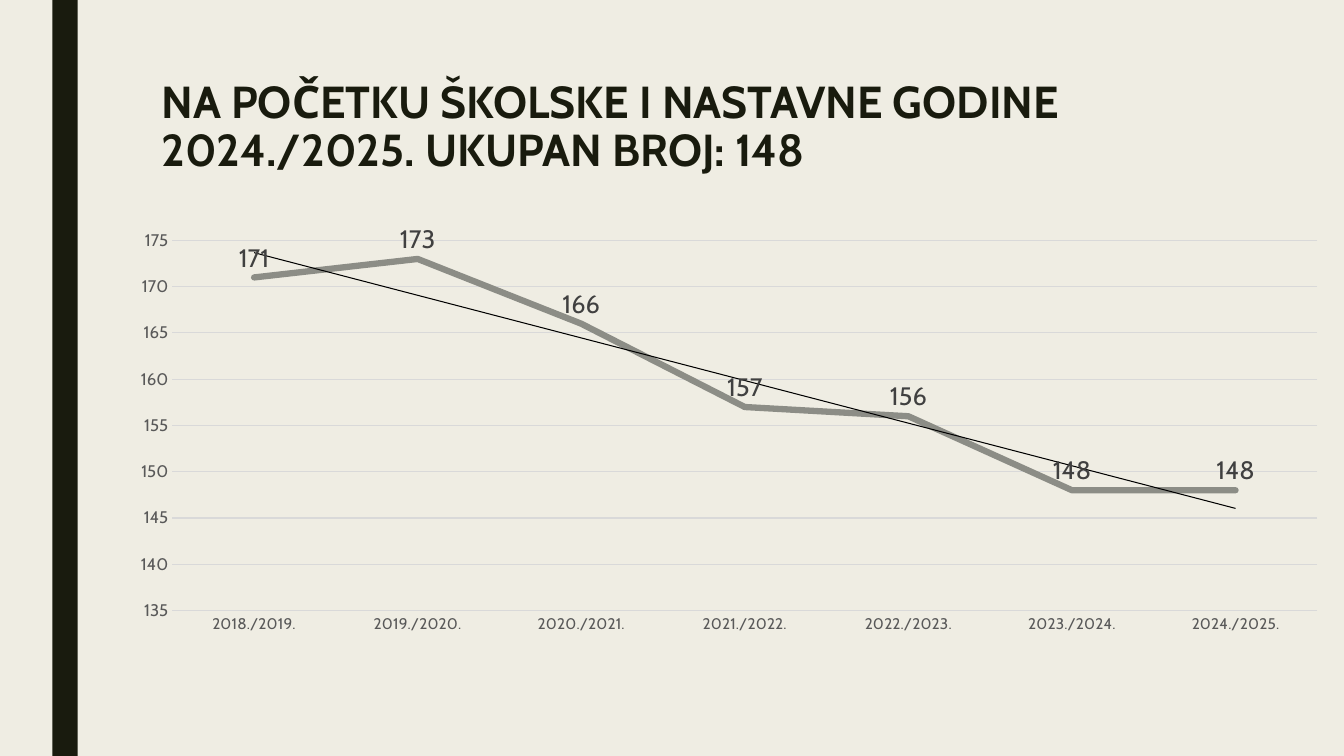
from dataclasses import dataclass

from lxml import etree
from pptx import Presentation
from pptx import util as u
from pptx.chart.data import CategoryChartData
from pptx.dml.color import RGBColor
from pptx.enum import chart as ch, shapes, text
from pptx.oxml import parse_xml
from pptx.oxml.ns import nsdecls, qn

# Content
TITLE = "NA POČETKU ŠKOLSKE I NASTAVNE GODINE 2024./2025. UKUPAN BROJ: 148"
PUPILS = {
    "2018./2019.": 171,
    "2019./2020.": 173,
    "2020./2021.": 166,
    "2021./2022.": 157,
    "2022./2023.": 156,
    "2023./2024.": 148,
    "2024./2025.": 148,
}
AXIS_MIN, AXIS_MAX, AXIS_STEP = 135, 175, 5


@dataclass(frozen=True)
class Theme:
    font: str = "Cabin"
    paper: str = "EFEDE3"
    ink: str = "191B0E"
    series: str = "8C8D86"
    grid: str = "D9D9D9"
    axis_text: str = "595959"
    label_text: str = "404040"
    trend: str = "000000"
    title_size: float = 32
    label_size: float = 18
    value_size: float = 12
    category_size: float = 11


THEME = Theme()

# Geometry: left, top, width, height in inches; the plot in shares of the chart
WIDTH, HEIGHT = 13.33, 7.5
BAR_BOX = (0.52, 0, 0.25, HEIGHT)
TITLE_BOX = (1.5, 0.75, 10.5, 1.62)
CHART_BOX = (0.45, 1.08, 12.98, 6.31)
PLOT_SHARES = {"x": 0.097, "y": 0.207, "w": 0.875, "h": 0.582}


def inches(box):
    return [u.Inches(length) for length in box]


def rgb(color):
    return RGBColor.from_string(color)


def style_font(font, size, color, bold=False):
    font.name, font.size, font.bold = THEME.font, u.Pt(size), bold
    font.color.rgb = rgb(color)


def style_line(line, color, width):
    line.color.rgb = rgb(color)
    line.width = u.Pt(width)


def add_title(slide):
    title = slide.shapes.title
    title.left, title.top, title.width, title.height = inches(TITLE_BOX)
    frame = title.text_frame
    frame.text = TITLE
    frame.word_wrap = True
    frame.auto_size = text.MSO_AUTO_SIZE.NONE
    frame.vertical_anchor = text.MSO_ANCHOR.TOP
    heading = frame.paragraphs[0]
    heading.alignment = text.PP_ALIGN.LEFT
    heading.line_spacing = 0.89
    style_font(heading.runs[0].font, THEME.title_size, THEME.ink, bold=True)


def add_side_bar(slide):
    bar = slide.shapes.add_shape(shapes.MSO_SHAPE.RECTANGLE, *inches(BAR_BOX))
    bar.shadow.inherit = False
    bar.fill.solid()
    bar.fill.fore_color.rgb = rgb(THEME.ink)
    bar.line.fill.background()


def place_plot(chart):
    plot_area = chart.plots[0]._element.getparent()
    for layout in plot_area.findall(qn("c:layout")):
        plot_area.remove(layout)
    layout = parse_xml(f"<c:layout {nsdecls('c')}><c:manualLayout/></c:layout>")
    settings = {"layoutTarget": "inner", "xMode": "edge", "yMode": "edge", **PLOT_SHARES}
    for tag, value in settings.items():
        etree.SubElement(layout[0], qn(f"c:{tag}")).set("val", str(value))
    plot_area.insert(0, layout)


def add_trend(series):
    trend = parse_xml(
        f"<c:trendline {nsdecls('c', 'a')}><c:spPr><a:ln w='9525'><a:solidFill>"
        f"<a:srgbClr val='{THEME.trend}'/></a:solidFill></a:ln></c:spPr>"
        "<c:trendlineType val='linear'/><c:dispRSqr val='0'/><c:dispEq val='0'/>"
        "</c:trendline>"
    )
    series._element.find(qn("c:cat")).addprevious(trend)


def add_pupil_chart(slide):
    data = CategoryChartData()
    data.categories = list(PUPILS)
    data.add_series("Series 1", list(PUPILS.values()))
    chart = slide.shapes.add_chart(
        ch.XL_CHART_TYPE.LINE, *inches(CHART_BOX), data).chart
    chart.has_title = chart.has_legend = False
    chart.font.name, chart.font.size = THEME.font, u.Pt(10)
    place_plot(chart)

    # Axes
    years, counts = chart.category_axis, chart.value_axis
    for axis, size in ((years, THEME.category_size), (counts, THEME.value_size)):
        axis.major_tick_mark = axis.minor_tick_mark = ch.XL_TICK_MARK.NONE
        style_font(axis.tick_labels.font, size, THEME.axis_text)
    style_line(years.format.line, THEME.grid, 0.75)
    counts.format.line.fill.background()
    counts.minimum_scale, counts.maximum_scale = AXIS_MIN, AXIS_MAX
    counts.major_unit = AXIS_STEP
    counts.has_major_gridlines = True
    style_line(counts.major_gridlines.format.line, THEME.grid, 0.75)

    # Line, value labels and trend
    plot = chart.plots[0]
    plot.vary_by_categories = False
    pupils = plot.series[0]
    pupils.smooth = False
    pupils.marker.style = ch.XL_MARKER_STYLE.NONE
    style_line(pupils.format.line, THEME.series, 4.5)
    pupils.format.line._get_or_add_ln().set("cap", "rnd")
    labels = pupils.data_labels
    labels.show_value = True
    labels.position = ch.XL_LABEL_POSITION.ABOVE
    style_font(labels.font, THEME.label_size, THEME.label_text)
    add_trend(pupils)


def main():
    deck = Presentation()
    deck.slide_width, deck.slide_height = u.Inches(WIDTH), u.Inches(HEIGHT)
    slide = deck.slides.add_slide(deck.slide_layouts[5])
    slide.background.fill.solid()
    slide.background.fill.fore_color.rgb = rgb(THEME.paper)
    add_side_bar(slide)
    add_title(slide)
    add_pupil_chart(slide)
    deck.save("out.pptx")


if __name__ == "__main__":
    main()
